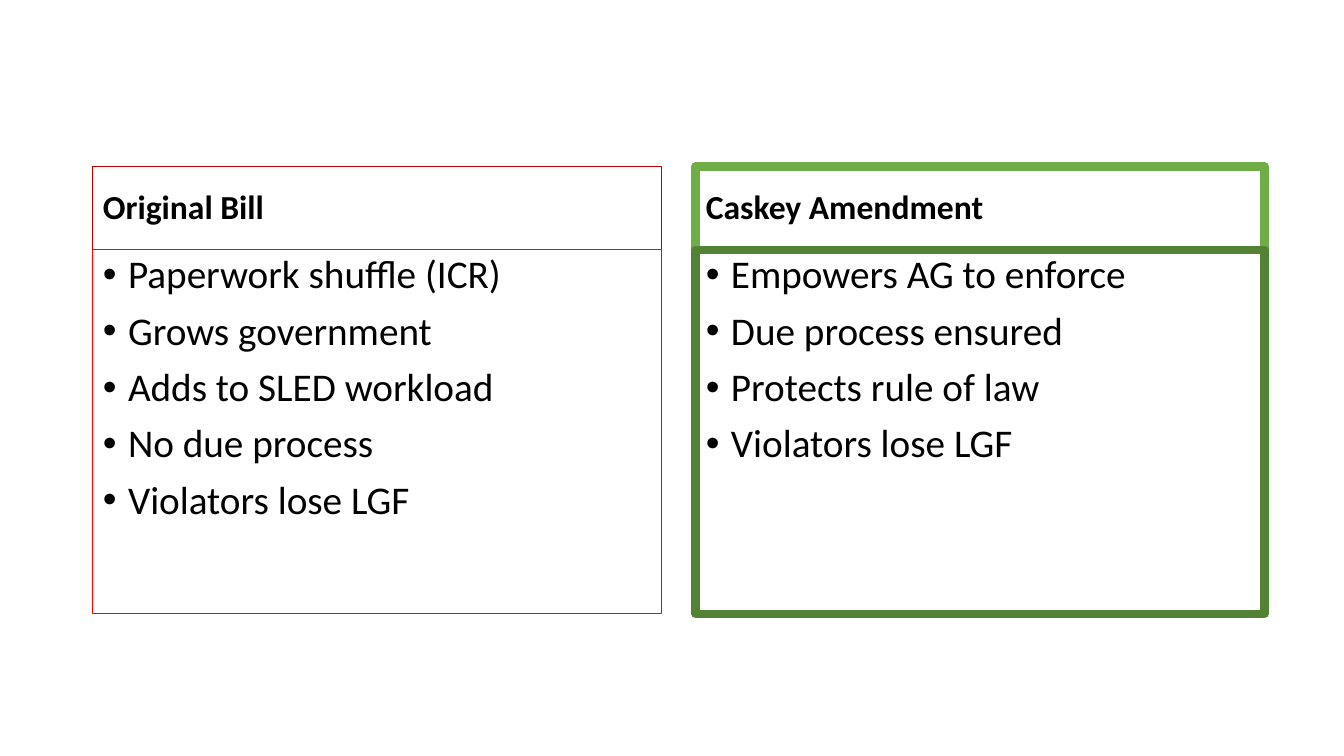
from dataclasses import dataclass

from pptx import Presentation
from pptx.dml.color import RGBColor
from pptx.enum.text import MSO_ANCHOR, MSO_AUTO_SIZE, PP_ALIGN
from pptx.util import Inches, Pt

MIDDLE, TOP = MSO_ANCHOR.MIDDLE, MSO_ANCHOR.TOP
NO_AUTOFIT = MSO_AUTO_SIZE.NONE
LEFT = PP_ALIGN.LEFT
COMPARISON_LAYOUT = 4


@dataclass(frozen=True)
class Theme:
    font: str = "Calibri"
    text: str = "000000"
    dark_red: str = "C00000"
    red: str = "FF0000"
    green: str = "70AD47"
    dark_green: str = "548235"
    heading_size: int = 24
    list_size: int = 28
    thin: float = 0.75
    thick: float = 6


theme = Theme()


def fill_box(box, position, border, lines, size, bold, anchor):
    """Place and outline a placeholder, then write its paragraphs."""
    box.left, box.top, box.width, box.height = [Inches(value) for value in position]
    color, weight = border
    box.line.color.rgb = RGBColor.from_string(color)
    box.line.width = Pt(weight)

    frame = box.text_frame
    frame.word_wrap = True
    frame.auto_size = NO_AUTOFIT
    frame.vertical_anchor = anchor
    for index, line in enumerate(lines):
        paragraph = frame.add_paragraph() if index else frame.paragraphs[0]
        paragraph.alignment = LEFT
        paragraph.line_spacing = 0.9
        paragraph.space_before = Pt(10)
        run = paragraph.add_run()
        run.text = line
        run.font.name = theme.font
        run.font.size = Pt(size)
        run.font.bold = bold
        run.font.color.rgb = RGBColor.from_string(theme.text)


presentation = Presentation()
presentation.slide_width = Inches(13.33)
presentation.slide_height = Inches(7.5)
slide = presentation.slides.add_slide(presentation.slide_layouts[COMPARISON_LAYOUT])

# The comparison stands without a title
title = slide.shapes.title.element
title.getparent().remove(title)

# Column geometry
column_left, column_width, column_step = 0.92, 5.64, 5.98
heading_top, heading_height, list_height = 1.65, 0.83, 3.61
list_top = heading_top + heading_height

# Heading, points, heading border colour, list border colour, border weight
columns = [
    ("Original Bill",
     ["Paperwork shuffle (ICR)", "Grows government", "Adds to SLED workload",
      "No due process", "Violators lose LGF"],
     theme.dark_red, theme.red, theme.thin),
    ("Caskey Amendment",
     ["Empowers AG to enforce", "Due process ensured", "Protects rule of law",
      "Violators lose LGF"],
     theme.green, theme.dark_green, theme.thick),
]

placeholders = {shape.placeholder_format.idx: shape for shape in slide.placeholders}
for number, (heading, points, heading_color, list_color, weight) in enumerate(columns):
    left = column_left + number * column_step
    heading_box = placeholders[1 + 2 * number]
    list_box = placeholders[2 + 2 * number]

    fill_box(heading_box, (left, heading_top, column_width, heading_height),
             (heading_color, weight), [heading], theme.heading_size, True, MIDDLE)
    fill_box(list_box, (left, list_top, column_width, list_height),
             (list_color, weight), points, theme.list_size, False, TOP)

    # Hanging indent; the bullet itself comes from the slide master
    for paragraph in list_box.text_frame.paragraphs:
        properties = paragraph._p.get_or_add_pPr()
        properties.set("marL", str(Inches(0.25)))
        properties.set("indent", str(-Inches(0.25)))

presentation.save("out.pptx")
